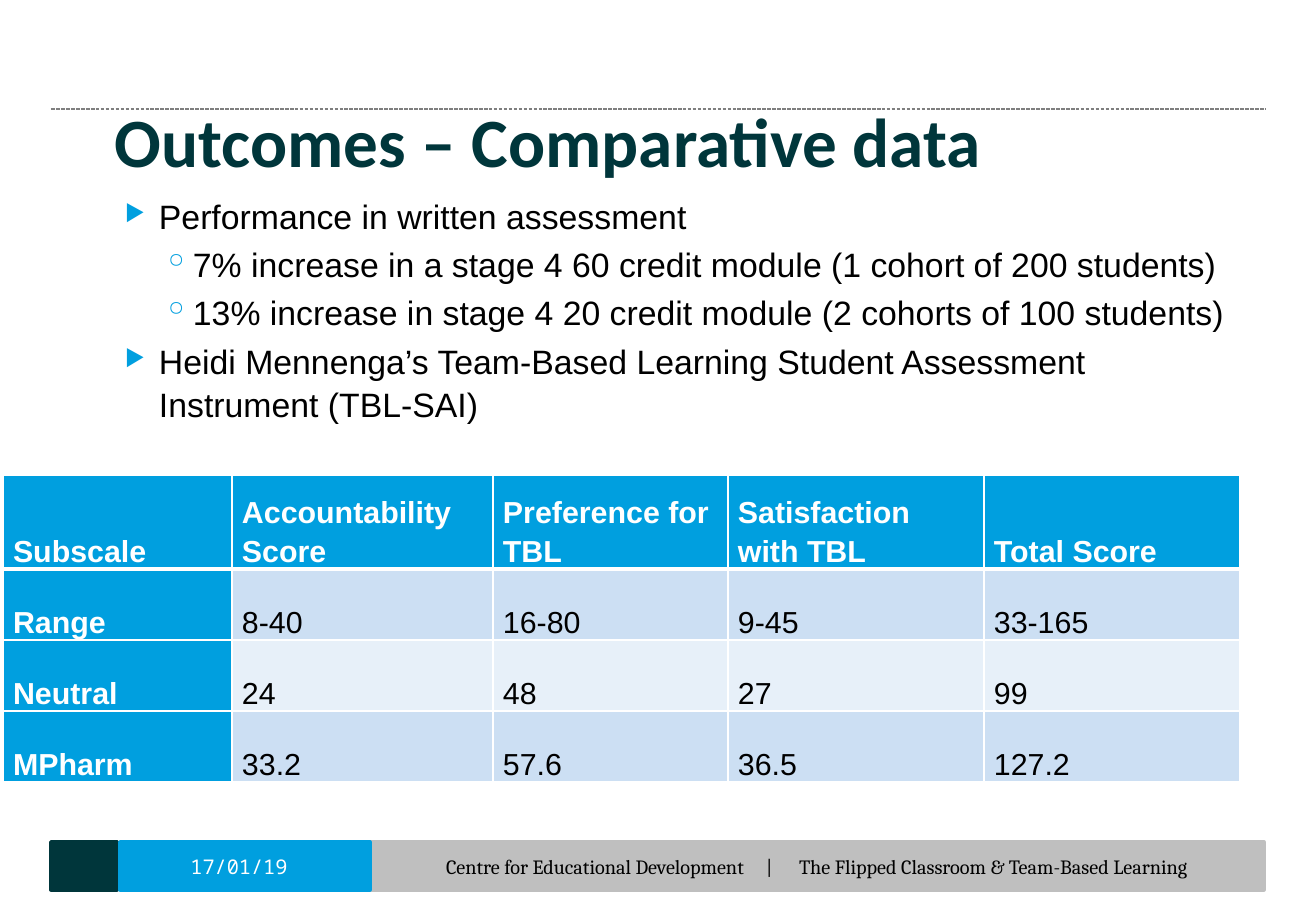
from lxml import etree
from pptx import Presentation
from pptx.dml.color import RGBColor
from pptx.enum.dml import MSO_LINE
from pptx.enum.shapes import MSO_CONNECTOR, MSO_SHAPE
from pptx.enum.text import MSO_ANCHOR, PP_ALIGN
from pptx.oxml.ns import qn
from pptx.util import Pt

RECTANGLE = MSO_SHAPE.RECTANGLE
STRAIGHT = MSO_CONNECTOR.STRAIGHT
DASHED = MSO_LINE.SQUARE_DOT
TOP, MIDDLE, BOTTOM = MSO_ANCHOR.TOP, MSO_ANCHOR.MIDDLE, MSO_ANCHOR.BOTTOM
LEFT, CENTER = PP_ALIGN.LEFT, PP_ALIGN.CENTER

TITLE = "Outcomes – Comparative data"
BULLETS = [
    (0, "Performance in written assessment"),
    (1, "7% increase in a stage 4 60 credit module (1 cohort of 200 students)"),
    (1, "13% increase in stage 4 20 credit module (2 cohorts of 100 students)"),
    (0, "Heidi Mennenga’s Team-Based Learning Student Assessment Instrument (TBL-SAI)"),
]
SCORES = [
    ["Subscale", "Accountability Score", "Preference for TBL", "Satisfaction with TBL", "Total Score"],
    ["Range", "8-40", "16-80", "9-45", "33-165"],
    ["Neutral", "24", "48", "27", "99"],
    ["MPharm", "33.2", "57.6", "36.5", "127.2"],
]
DATE = "17/01/19"
FOOTER = "Centre for Educational Development\t|\tThe Flipped Classroom & Team-Based Learning"

THEME = {
    "dark": "00363B", "accent": "009FDF", "gray": "BFBFBF", "rule": "7F7F7F",
    "band": "CCDFF3", "light_band": "E7F0F9", "white": "FFFFFF", "black": "000000",
    "title": ("Calibri", 41), "body": ("Arial", 20), "table": ("Arial", 18),
    "date": ("Noto Sans Mono", 12), "footer": ("Cambria", 12),
}
LEVELS = [
    {"mark": "▶", "mark_size": 68, "left": 49, "hanging": 34, "before": 4},
    {"mark": "◦", "mark_size": 100, "left": 83, "hanging": 30, "before": 3.2},
]
FOOTER_TOP, FOOTER_HEIGHT = 842, 48
FOOTER_BARS = [("dark", 51, 66), ("gray", 371, 893), ("accent", 120, 250)]
FOOTER_TABS = [320, 353]
COLUMNS = [229, 261, 235, 256, 256]
ROWS = [94, 71, 71, 71]


def px(value):
    return value * 7526


def color(name):
    return RGBColor.from_string(THEME[name])


def style(paragraph, role, color_name, bold=False):
    name, size = THEME[role]
    for run in paragraph.runs:
        run.font.name = name
        run.font.size = Pt(size)
        run.font.bold = bold
        run.font.color.rgb = color(color_name)


def add_text(slide, box, margins, anchor):
    frame = slide.shapes.add_textbox(*map(px, box)).text_frame
    frame.word_wrap = True
    frame.vertical_anchor = anchor
    set_margins(frame, margins)
    return frame


def set_margins(target, margins):
    target.margin_left, target.margin_top, target.margin_right, target.margin_bottom = map(px, margins)


def add_label(slide, text, box, margins, anchor, align, role, color_name, bold=False):
    frame = add_text(slide, box, margins, anchor)
    frame.text = text
    paragraph = frame.paragraphs[0]
    paragraph.alignment = align
    style(paragraph, role, color_name, bold)
    return paragraph


def add_bar(slide, color_name, left, width):
    bar = slide.shapes.add_shape(RECTANGLE, px(left), px(FOOTER_TOP), px(width), px(FOOTER_HEIGHT))
    bar.shadow.inherit = False
    bar.fill.solid()
    bar.fill.fore_color.rgb = color(color_name)
    bar.line.color.rgb = color(color_name)
    bar.line.width = Pt(2)


def add_rule(slide):
    rule = slide.shapes.add_connector(STRAIGHT, px(51), px(109), px(1266), px(109))
    rule.line.color.rgb = color("rule")
    rule.line.width = Pt(0.75)
    rule.line.dash_style = DASHED
    etree.SubElement(rule._element.spPr, qn("a:effectLst"))


def add_bullets(slide):
    frame = add_text(slide, (98, 188, 1151, 270), (12, 6, 12, 6), TOP)
    for index, (level, text) in enumerate(BULLETS):
        paragraph = frame.add_paragraph() if index else frame.paragraphs[0]
        paragraph.text = text
        paragraph.level = level
        look = LEVELS[level]
        properties = paragraph._p.get_or_add_pPr()
        properties.set("marL", str(px(look["left"])))
        properties.set("indent", str(-px(look["hanging"])))
        bullet_color = etree.SubElement(properties, qn("a:buClr"))
        etree.SubElement(bullet_color, qn("a:srgbClr"), val=THEME["accent"])
        etree.SubElement(properties, qn("a:buSzPct"), val=str(look["mark_size"] * 1000))
        etree.SubElement(properties, qn("a:buChar"), char=look["mark"])
        paragraph.line_spacing = 1.05
        if index:
            paragraph.space_before = Pt(look["before"])
        style(paragraph, "body", "black")


def set_borders(cell, row):
    widths = {"L": 1, "R": 1, "T": 3 if row == 1 else 1, "B": 3 if row == 0 else 1}
    properties = cell._tc.get_or_add_tcPr()
    for side, width in widths.items():
        border = etree.SubElement(properties, qn(f"a:ln{side}"), w=str(Pt(width)))
        fill = etree.SubElement(border, qn("a:solidFill"))
        etree.SubElement(fill, qn("a:srgbClr"), val=THEME["white"])


def add_scores(slide):
    frame = slide.shapes.add_table(
        len(ROWS), len(COLUMNS), px(3), px(475), px(sum(COLUMNS)), px(sum(ROWS)))
    table = frame.table
    for column, width in zip(table.columns, COLUMNS):
        column.width = px(width)
    for row, height in zip(table.rows, ROWS):
        row.height = px(height)
    for row, values in enumerate(SCORES):
        for column, value in enumerate(values):
            cell = table.cell(row, column)
            heading = row == 0 or column == 0
            set_borders(cell, row)
            cell.fill.solid()
            band = "band" if row % 2 else "light_band"
            cell.fill.fore_color.rgb = color("accent" if heading else band)
            cell.vertical_anchor = BOTTOM
            set_margins(cell, (10, 0, 10, 0))
            cell.text_frame.text = value
            paragraph = cell.text_frame.paragraphs[0]
            paragraph.line_spacing = 1.15
            style(paragraph, "table", "white" if heading else "black", heading)


def add_footer_text(slide):
    add_label(slide, DATE, (120, FOOTER_TOP, 250, FOOTER_HEIGHT), (0, 0, 12, 0),
              MIDDLE, CENTER, "date", "white")
    paragraph = add_label(slide, FOOTER, (371, FOOTER_TOP, 893, FOOTER_HEIGHT), (75, 0, 15, 0),
                          MIDDLE, LEFT, "footer", "black")
    tabs = etree.SubElement(paragraph._p.get_or_add_pPr(), qn("a:tabLst"))
    for position in FOOTER_TABS:
        etree.SubElement(tabs, qn("a:tab"), pos=str(px(position)), algn="l")


def main():
    presentation = Presentation()
    presentation.slide_width, presentation.slide_height = px(1316), px(911)
    slide = presentation.slides.add_slide(presentation.slide_layouts[6])
    for bar in FOOTER_BARS:
        add_bar(slide, *bar)
    add_rule(slide)
    add_label(slide, TITLE, (103, 92, 1151, 152), (12, 6, 12, 6), TOP, LEFT, "title", "dark", True)
    add_bullets(slide)
    add_scores(slide)
    add_footer_text(slide)
    presentation.save("out.pptx")


if __name__ == "__main__":
    main()
